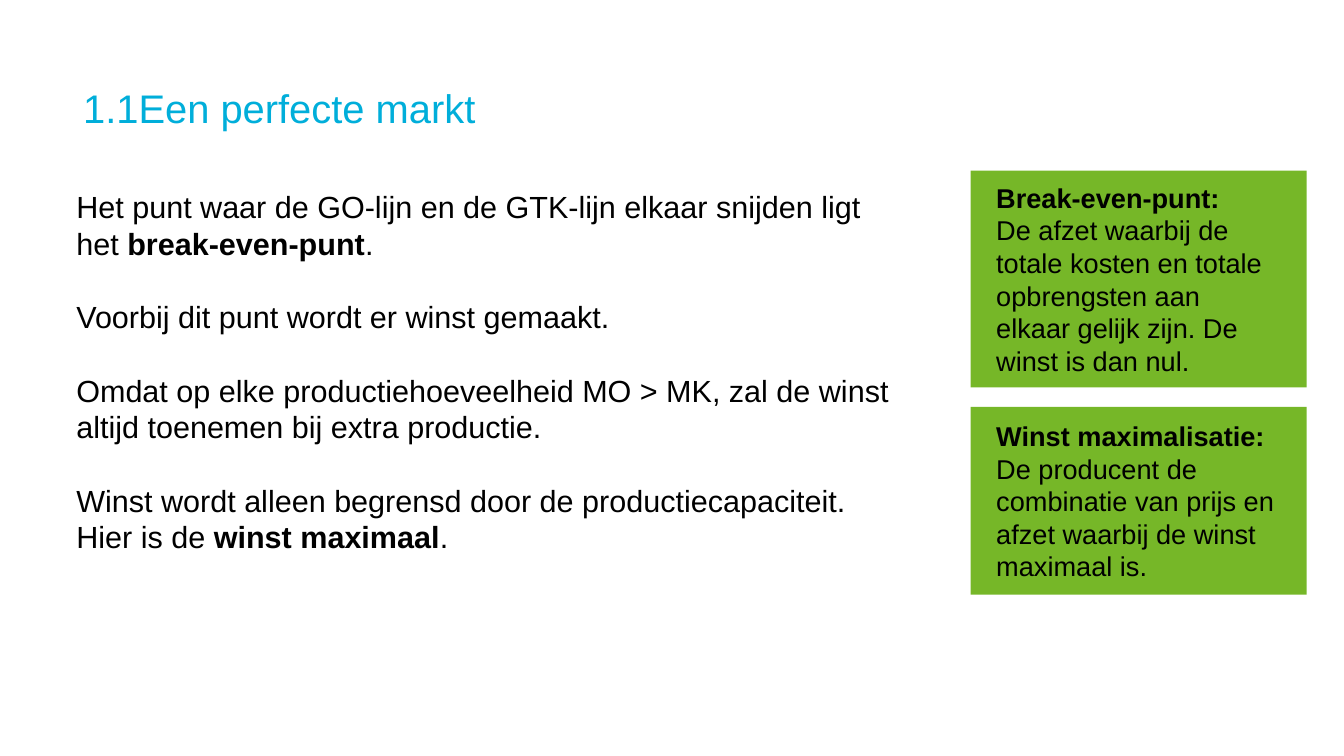
from dataclasses import dataclass

from pptx import Presentation
from pptx.dml.color import RGBColor
from pptx.enum.shapes import MSO_SHAPE
from pptx.enum.text import MSO_ANCHOR, PP_ALIGN
from pptx.shapes.base import BaseShape
from pptx.slide import Slide
from pptx.util import Inches, Pt

RECT = MSO_SHAPE.RECTANGLE
TOP, MIDDLE = MSO_ANCHOR.TOP, MSO_ANCHOR.MIDDLE
LEFT = PP_ALIGN.LEFT
FONT = "Arial"
COLORS = {"title": "00AEDA", "text": "000000", "card": "76B728"}
LEAD = 1.2


@dataclass
class Card:
    term: str
    text: str
    top: float
    height: float


TITLE = "1.1Een perfecte markt"
BODY = [
    "Het punt waar de GO-lijn en de GTK-lijn elkaar snijden ligt het **break-even-punt**.",
    "Voorbij dit punt wordt er winst gemaakt.",
    "Omdat op elke productiehoeveelheid MO > MK, zal de winst altijd toenemen "
    "bij extra productie.",
    "Winst wordt alleen begrensd door de productiecapaciteit. "
    "Hier is de **winst maximaal**.",
]
CARDS = [
    Card("Break-even-punt:",
         "De afzet waarbij de totale kosten en totale opbrengsten aan elkaar "
         "gelijk zijn. De winst is dan nul.", 2.79, 3.55),
    Card("Winst maximalisatie:",
         "De producent de combinatie van prijs en afzet waarbij de winst "
         "maximaal is.", 6.66, 3.07),
]


def place(shape: BaseShape, left: float, top: float, width: float, height: float) -> None:
    shape.left, shape.top = Inches(left), Inches(top)
    shape.width, shape.height = Inches(width), Inches(height)


def write(shape: BaseShape, paras: list[str], *, size: float, color: str = "text",
          inset: tuple[float, float] = (0, 0), anchor: MSO_ANCHOR = TOP,
          lead: float | None = None, gap: float = 0) -> None:
    """Fill a shape with paragraphs; text between ** marks is bold."""
    frame = shape.text_frame
    frame.word_wrap = True
    frame.vertical_anchor = anchor
    frame.margin_left = frame.margin_right = Inches(inset[0])
    frame.margin_top = frame.margin_bottom = Inches(inset[1])
    for i, text in enumerate(paras):
        para = frame.add_paragraph() if i else frame.paragraphs[0]
        para.alignment = LEFT
        para.line_spacing = Pt(lead) if lead else 1.0
        para.space_before = Pt(gap if i else 0)
        for j, part in enumerate(text.split("**")):
            if part:
                run = para.add_run()
                run.text = part
                font = run.font
                font.name, font.size, font.bold = FONT, Pt(size), j % 2 == 1
                font.color.rgb = RGBColor.from_string(COLORS[color])


def draw_card(slide: Slide, card: Card) -> None:
    box = slide.shapes.add_shape(RECT, 0, 0, 0, 0)
    place(box, 15.88, card.top, 5.5, card.height)
    box.shadow.inherit = False
    box.fill.solid()
    box.fill.fore_color.rgb = RGBColor.from_string(COLORS["card"])
    box.line.fill.background()
    write(box, [f"**{card.term}**", card.text], size=32, inset=(0.42, 0.42),
          anchor=MIDDLE, lead=32 * LEAD)


def main() -> None:
    deck = Presentation()
    deck.slide_width, deck.slide_height = Inches(21.99), Inches(12.37)
    slide = deck.slides.add_slide(deck.slide_layouts[5])

    title = slide.shapes.title
    place(title, 1.36, 1.36, 19.25, 0.91)
    write(title, [TITLE], size=47, color="title")

    body = slide.shapes.add_textbox(0, 0, 0, 0)
    place(body, 1.15, 3.03, 13.78, 6.16)
    write(body, BODY, size=36, inset=(0.1, 0.05), lead=36 * LEAD, gap=36 * LEAD)

    for card in CARDS:
        draw_card(slide, card)
    deck.save("out.pptx")


if __name__ == "__main__":
    main()
